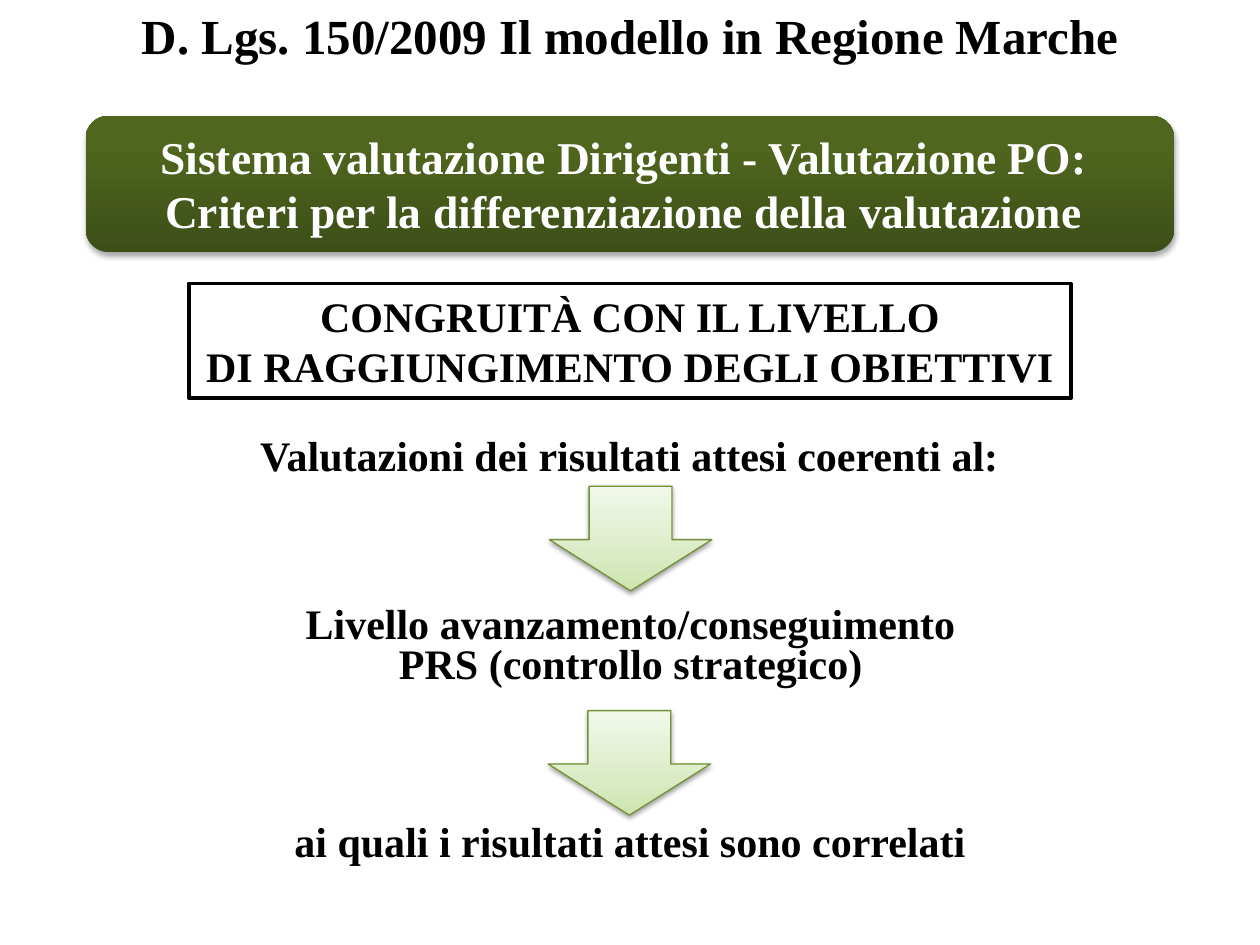
"""Build the slide on consistency between evaluations and achieved objectives."""
from dataclasses import dataclass

import lxml.etree
import pptx
import pptx.dml.color
import pptx.enum.shapes
import pptx.enum.text
import pptx.oxml.ns
import pptx.util

Inches = pptx.util.Inches
Shapes = pptx.enum.shapes.MSO_SHAPE
Anchor = pptx.enum.text.MSO_ANCHOR
AutoSize = pptx.enum.text.MSO_AUTO_SIZE
qn = pptx.oxml.ns.qn

COLOURS = {
    "black": "000000",
    "white": "FFFFFF",
    "arrow_line": "749139",
    "banner_low": "3D4F17",
    "banner_mid": "50661E",
    "banner_high": "50681D",
    "arrow_low": "CDE4AD",
    "arrow_mid": "DBEBC6",
    "arrow_high": "F1F8E9",
}
BANNER_STOPS = ((0, "banner_low"), (80, "banner_mid"), (100, "banner_high"))
ARROW_STOPS = ((0, "arrow_low"), (35, "arrow_mid"), (100, "arrow_high"))


@dataclass
class Caption:
    """Describe a text box with centred lines."""
    left: float
    top: float
    width: float
    height: float
    lines: tuple[str, ...]
    size: int = 24
    spacing: float = 0.8
    wrap: bool = False
    auto_size: AutoSize = AutoSize.SHAPE_TO_FIT_TEXT


@dataclass
class Arrow:
    """Describe the position of a block arrow."""
    left: float
    top: float


CAPTIONS = (
    Caption(1, 0.05, 8, 0.5, ("D. Lgs. 150/2009 Il modello in Regione Marche",),
            28, 0.9, True, AutoSize.NONE),
    Caption(1.94, 3.44, 6.11, 0.42, ("Valutazioni dei risultati attesi coerenti al:",)),
    Caption(2.3, 4.77, 5.41, 0.75,
            ("Livello avanzamento/conseguimento", "PRS (controllo strategico)")),
    Caption(2.21, 6.5, 5.58, 0.42, ("ai quali i risultati attesi sono correlati",)),
)
ARROWS = (Arrow(4.36, 3.86), Arrow(4.35, 5.64))


def colour(name: str) -> pptx.dml.color.RGBColor:
    """Return the named colour."""
    return pptx.dml.color.RGBColor.from_string(COLOURS[name])


def write_lines(box, lines: tuple[str, ...], size: int, ink: str, spacing: float = 1.0,
                **frame_format) -> None:
    """Write centred bold lines into a box."""
    frame = box.text_frame
    for name, value in frame_format.items():
        setattr(frame, name, value)
    for index, line in enumerate(lines):
        para = frame.paragraphs[0] if index == 0 else frame.add_paragraph()
        para.alignment = pptx.enum.text.PP_ALIGN.CENTER
        para.line_spacing = spacing
        span = para.add_run()
        span.text = line
        span.font.color.rgb = colour(ink)
        font_format = {"name": "Times New Roman", "size": pptx.util.Pt(size), "bold": True}
        for name, value in font_format.items():
            setattr(span.font, name, value)


def add_block(page, kind: Shapes, left: float, top: float, width: float, height: float):
    """Add a preset shape without fill, line or shadow."""
    block = page.shapes.add_shape(kind, Inches(left), Inches(top), Inches(width), Inches(height))
    block.shadow.inherit = False
    block.fill.background()
    block.line.fill.background()
    return block


def add_gradient(block, stops: tuple[tuple[int, str], ...]) -> None:
    """Fill a block with a gradient rising from its bottom edge."""
    block.fill.gradient()
    block.fill.gradient_angle = 90
    stop_list = block.element.spPr.find(f".//{qn('a:gsLst')}")
    for stop in list(stop_list):
        stop_list.remove(stop)
    for position, name in stops:
        stop = lxml.etree.SubElement(stop_list, qn("a:gs"), pos=str(position * 1000))
        lxml.etree.SubElement(stop, qn("a:srgbClr"), val=COLOURS[name])


def add_shadow(block, opacity: int, distance: float) -> None:
    """Cast a soft black shadow below a block."""
    effects = block.element.spPr.find(qn("a:effectLst"))
    shadow = lxml.etree.SubElement(
        effects, qn("a:outerShdw"), blurRad=str(pptx.util.Pt(3.1)),
        dist=str(pptx.util.Pt(distance)), dir="5400000", rotWithShape="0")
    tint = lxml.etree.SubElement(shadow, qn("a:srgbClr"), val=COLOURS["black"])
    lxml.etree.SubElement(tint, qn("a:alpha"), val=str(opacity * 1000))


def set_line(block, name: str, width: float) -> None:
    """Outline a block."""
    block.line.color.rgb = colour(name)
    block.line.width = pptx.util.Pt(width)


def add_banner(page) -> None:
    """Add the green heading banner."""
    banner = add_block(page, Shapes.ROUNDED_RECTANGLE, 0.68, 0.92, 8.64, 1.08)
    add_gradient(banner, BANNER_STOPS)
    add_shadow(banner, 35, 1.8)
    lines = ("Sistema valutazione Dirigenti - Valutazione PO: ",
             "Criteri per la differenziazione della valutazione ")
    write_lines(banner, lines, 26, "white", word_wrap=True, vertical_anchor=Anchor.TOP,
                auto_size=AutoSize.SHAPE_TO_FIT_TEXT)


def add_criterion(page) -> None:
    """Add the framed criterion."""
    criterion = add_block(page, Shapes.RECTANGLE, 1.5, 2.25, 7, 0.91)
    set_line(criterion, "black", 2.25)
    lines = ("CONGRUITÀ CON IL LIVELLO", "DI RAGGIUNGIMENTO DEGLI OBIETTIVI")
    write_lines(criterion, lines, 24, "black", word_wrap=False, vertical_anchor=Anchor.MIDDLE,
                auto_size=AutoSize.SHAPE_TO_FIT_TEXT)


def add_caption(page, caption: Caption) -> None:
    """Add one caption."""
    box = page.shapes.add_textbox(Inches(caption.left), Inches(caption.top),
                                  Inches(caption.width), Inches(caption.height))
    write_lines(box, caption.lines, caption.size, "black", caption.spacing,
                word_wrap=caption.wrap, auto_size=caption.auto_size)


def add_arrow(page, arrow: Arrow) -> None:
    """Add one green down arrow."""
    block = add_block(page, Shapes.DOWN_ARROW, arrow.left, arrow.top, 1.29, 0.83)
    block.adjustments[0] = 0.51
    block.adjustments[1] = 0.49
    add_gradient(block, ARROW_STOPS)
    set_line(block, "arrow_line", 0.75)
    add_shadow(block, 38, 1.6)


def main() -> None:
    """Build and save the deck."""
    deck = pptx.Presentation()
    deck.slide_width, deck.slide_height = Inches(10), Inches(7.5)
    page = deck.slides.add_slide(deck.slide_layouts[6])
    add_banner(page)
    add_criterion(page)
    for caption in CAPTIONS:
        add_caption(page, caption)
    for arrow in ARROWS:
        add_arrow(page, arrow)
    deck.save("out.pptx")


if __name__ == "__main__":
    main()
